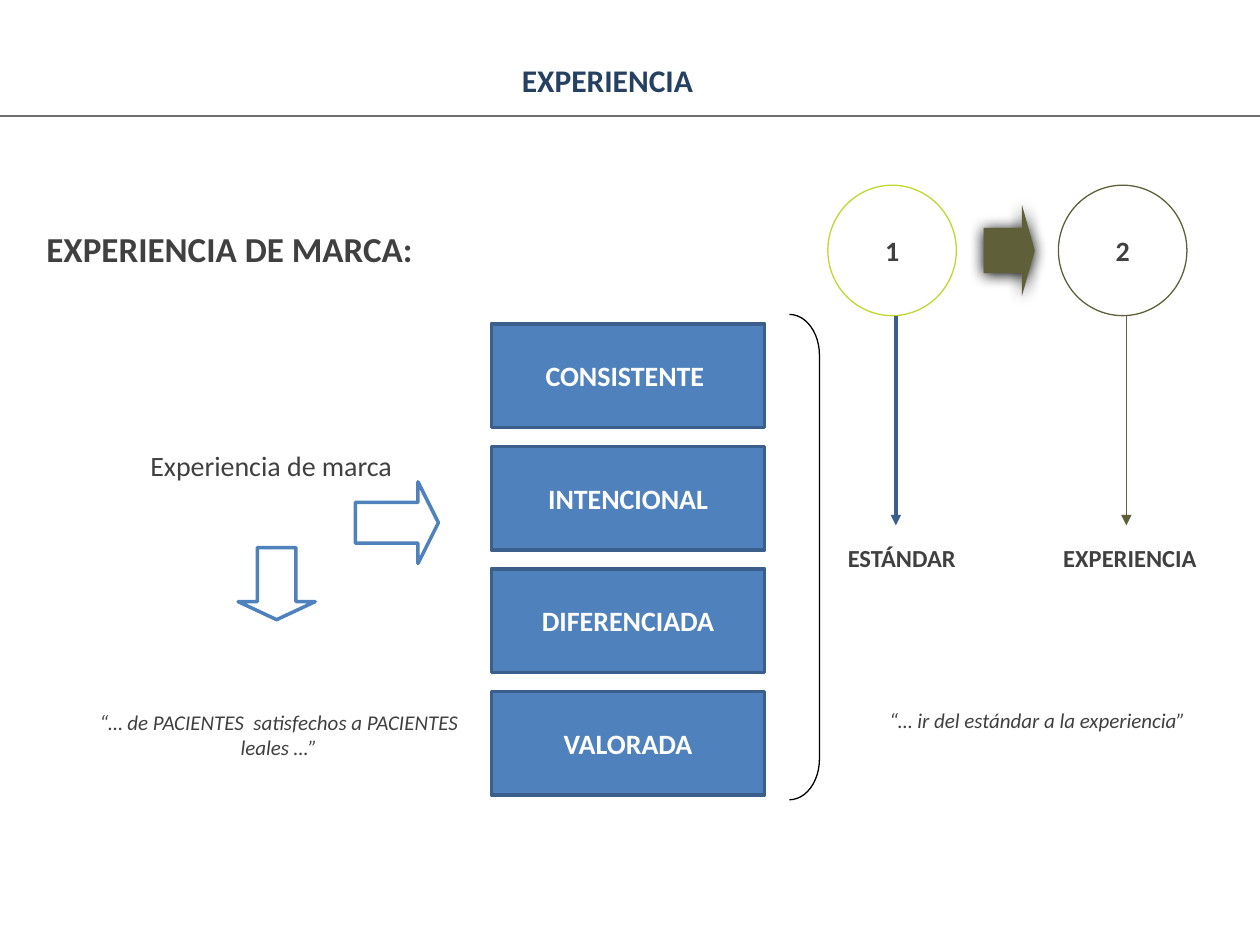
import collections

import pptx
import pptx.dml.color
import pptx.enum.shapes
import pptx.enum.text
import pptx.oxml
import pptx.oxml.ns
import pptx.util

SHAPE = pptx.enum.shapes.MSO_SHAPE
ANCHOR = pptx.enum.text.MSO_ANCHOR
ALIGN = pptx.enum.text.PP_ALIGN
WIDTH, HEIGHT = 10, 7.5
GREY, BLUE, DARK_BLUE, OLIVE, LIME = "404040", "4F81BD", "3A5F8C", "5F603A", "C1D72F"


class Box(collections.namedtuple("Box", "left top width height")):
    def inner(self, x, y, w, h):
        """Return the inner box given as shares of this one."""
        return Box(self.left + x * self.width, self.top + y * self.height,
                   w * self.width, h * self.height)

    def emu(self):
        return [pptx.util.Inches(length) for length in self]


def color(hex_string):
    return pptx.dml.color.RGBColor.from_string(hex_string)


def write(frame, text, size, ink=GREY, bold=False, italic=False,
          align=ALIGN.CENTER, anchor=ANCHOR.TOP, wrap=True):
    frame.word_wrap = wrap
    frame.vertical_anchor = anchor
    paragraph = frame.paragraphs[0]
    paragraph.text = text
    paragraph.alignment = align
    font = paragraph.font
    font.name, font.size = "Calibri", pptx.util.Pt(size)
    font.bold, font.italic = bold, italic
    font.color.rgb = color(ink)


def add_text(slide, box, text, size, **style):
    write(slide.shapes.add_textbox(*box.emu()).text_frame, text, size, **style)


def add_shape(slide, kind, box, fill=None, line=None, weight=0.75):
    shape = slide.shapes.add_shape(kind, *box.emu())
    shape.shadow.inherit = False
    if fill:
        shape.fill.solid()
        shape.fill.fore_color.rgb = color(fill)
    else:
        shape.fill.background()
    if line:
        shape.line.color.rgb = color(line)
        shape.line.width = pptx.util.Pt(weight)
    else:
        shape.line.fill.background()
    return shape


def add_line(slide, box, ink, weight=0.75, arrow=False):
    left, top, width, height = box.emu()
    line = slide.shapes.add_connector(pptx.enum.shapes.MSO_CONNECTOR.STRAIGHT,
                                      left, top, left + width, top + height)
    line.line.color.rgb = color(ink)
    line.line.width = pptx.util.Pt(weight)
    properties = line._element.spPr
    if arrow:
        properties.find(pptx.oxml.ns.qn("a:ln")).append(pptx.oxml.parse_xml(
            f'<a:tailEnd {pptx.oxml.ns.nsdecls("a")} type="triangle"/>'))
    properties.append(
        pptx.oxml.parse_xml(f'<a:effectLst {pptx.oxml.ns.nsdecls("a")}/>'))


def add_glow_shadow(shape):
    """Give the shape a soft black shadow just below it."""
    effects = shape._element.spPr.find(pptx.oxml.ns.qn("a:effectLst"))
    effects.append(pptx.oxml.parse_xml(
        f'<a:outerShdw {pptx.oxml.ns.nsdecls("a")} blurRad="{pptx.util.Pt(8.5)}" '
        f'dist="{pptx.util.Pt(1)}" dir="5400000" rotWithShape="0">'
        '<a:srgbClr val="000000"/></a:outerShdw>'))


def header(slide, box):
    add_text(slide, box.inner(0.22, 0.47, 0.53, 0.43), "EXPERIENCIA ", 18,
             ink="254061", bold=True)
    add_line(slide, box.inner(0, 1, 1, 0), "707070")


def brand_experience(slide, box):
    add_text(slide, box.inner(0, 0, 1.62, 0.1), "EXPERIENCIA DE MARCA:", 20,
             bold=True, align=ALIGN.LEFT, anchor=ANCHOR.MIDDLE)
    add_text(slide, box.inner(0.22, 0.4, 0.62, 0.08), "Experiencia de marca ", 16)
    for place, turn in (((0.45, 0.59, 0.17, 0.13), 0), ((0.71, 0.47, 0.18, 0.15), 270)):
        arrow = add_shape(slide, SHAPE.DOWN_ARROW, box.inner(*place), "FFFFFF", BLUE, 2)
        arrow.adjustments[1] = 0.25
        arrow.rotation = turn
    add_text(slide, box.inner(0.08, 0.87, 0.92, 0.11),
             "“… de PACIENTES  satisfechos a PACIENTES leales …”", 12, italic=True)


def qualities(slide, box):
    names = ("CONSISTENTE ", "INTENCIONAL", "DIFERENCIADA", "VALORADA")
    row_height = 0.22
    pitch = (1 - row_height) / (len(names) - 1)
    for row, name in enumerate(names):
        block = add_shape(slide, SHAPE.RECTANGLE, box.inner(0, row * pitch, 1, row_height),
                          BLUE, DARK_BLUE, 2)
        write(block.text_frame, name, 16, ink="FFFFFF", bold=True, anchor=ANCHOR.MIDDLE)
    bracket = add_shape(slide, SHAPE.RIGHT_BRACKET, box.inner(1.09, -0.02, 0.11, 1.03),
                        line="000000")
    bracket.adjustments[0] = 1.36


def steps(slide, box):
    """Draw two numbered circles, each leading down to its label."""
    columns = (
        (0, "1", LIME, DARK_BLUE, 2, "ESTÁNDAR", (0.02, 0.62, 0.36, 0.07)),
        (0.61, "2", OLIVE, OLIVE, 0.75, "EXPERIENCIA", (0.59, 0.62, 0.42, 0.08)),
    )
    for x, number, ring, ink, weight, label, label_place in columns:
        circle = add_shape(slide, SHAPE.OVAL, box.inner(x, 0, 0.34, 0.23), line=ring)
        write(circle.text_frame, number, 16, bold=True, anchor=ANCHOR.MIDDLE, wrap=False)
        add_line(slide, box.inner(x + 0.18, 0.23, 0, 0.37), ink, weight, arrow=True)
        add_text(slide, box.inner(*label_place), label, 14, bold=True,
                 align=ALIGN.LEFT, wrap=False)
    arrow = add_shape(slide, SHAPE.DOWN_ARROW, box.inner(0.36, 0.07, 0.24, 0.09), OLIVE)
    arrow.adjustments[1] = 0.25
    arrow.rotation = 270
    add_glow_shadow(arrow)
    add_text(slide, box.inner(0.13, 0.91, 0.85, 0.07),
             "“… ir del estándar a la experiencia”", 12, italic=True, wrap=False)


def main():
    deck = pptx.Presentation()
    deck.slide_width = pptx.util.Inches(WIDTH)
    deck.slide_height = pptx.util.Inches(HEIGHT)
    slide = deck.slides.add_slide(deck.slide_layouts[6])
    header(slide, Box(0, 0, WIDTH, 0.92))
    brand_experience(slide, Box(0.27, 1.75, 3.6, 4.4))
    qualities(slide, Box(3.9, 2.57, 2.17, 3.74))
    steps(slide, Box(6.57, 1.47, 3, 4.5))
    deck.save("out.pptx")


if __name__ == "__main__":
    main()
